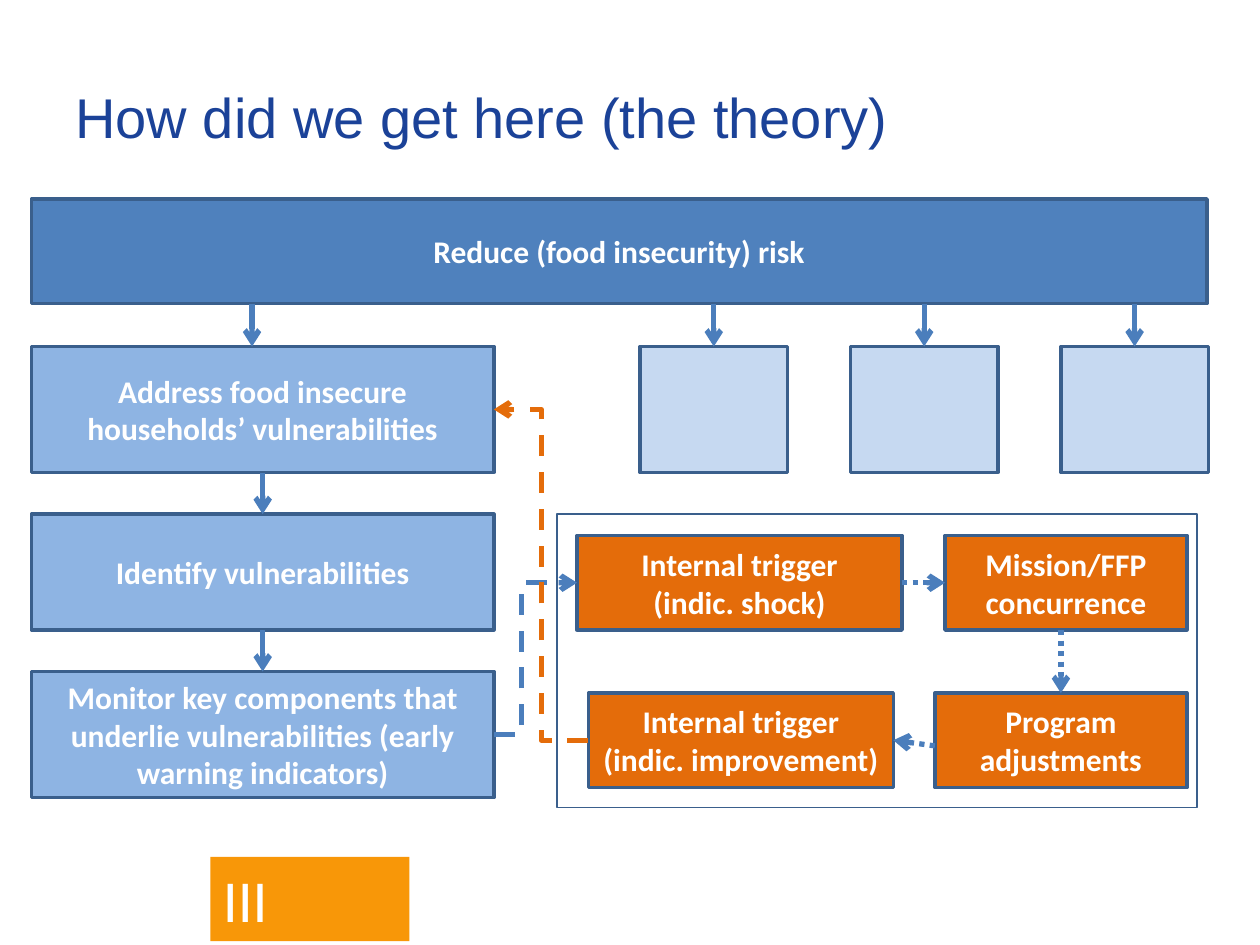
from dataclasses import dataclass

from lxml import etree
from pptx import Presentation
from pptx.dml.color import RGBColor
from pptx.enum.dml import MSO_LINE
from pptx.enum.shapes import MSO_CONNECTOR as CONN, MSO_SHAPE
from pptx.enum.text import MSO_ANCHOR, PP_ALIGN
from pptx.oxml.ns import qn
from pptx.util import Inches, Pt

TOP, LEFT, BOTTOM, RIGHT = range(4)


@dataclass(frozen=True)
class Theme:
    title: str = "1B4298"
    goal: str = "4F81BD"
    step: str = "8EB4E3"
    other: str = "C6D9F1"
    trigger: str = "E46C0A"
    outline: str = "3A5F8C"
    arrow: str = "4B7EBC"
    badge: str = "F89708"
    white: str = "FFFFFF"
    title_font: str = "Arial"
    body_font: str = "Calibri"
    title_size: int = 32
    body_size: int = 18
    badge_size: int = 34


THEME = Theme()


def rgb(value):
    return RGBColor.from_string(value)


def write(tf, lines, size, color, font=THEME.body_font, bold=False,
          align=PP_ALIGN.CENTER, anchor=MSO_ANCHOR.MIDDLE):
    tf.word_wrap = True
    tf.vertical_anchor = anchor
    for i, line in enumerate(lines):
        p = tf.paragraphs[0] if i == 0 else tf.add_paragraph()
        p.alignment = align
        r = p.add_run()
        r.text = line
        r.font.name, r.font.size, r.font.bold = font, Pt(size), bold
        r.font.color.rgb = rgb(color)


def add_rect(slide, at, fill=None, line_width=None):
    sp = slide.shapes.add_shape(MSO_SHAPE.RECTANGLE, *map(Inches, at))
    sp.shadow.inherit = False
    if fill:
        sp.fill.solid()
        sp.fill.fore_color.rgb = rgb(fill)
    else:
        sp.fill.background()
    if line_width:
        sp.line.color.rgb = rgb(THEME.outline)
        sp.line.width = Pt(line_width)
    else:
        sp.line.fill.background()
    return sp


def add_box(slide, at, fill, *lines):
    sp = add_rect(slide, at, fill, 2)
    write(sp.text_frame, lines, THEME.body_size, THEME.white, bold=True)
    return sp


def side_point(sp, side):
    x = sp.left + {LEFT: 0, RIGHT: sp.width}.get(side, sp.width // 2)
    y = sp.top + {TOP: 0, BOTTOM: sp.height}.get(side, sp.height // 2)
    return x, y


def add_arrow(slide, start, end, color=THEME.arrow, dash=None, bend=None):
    """Each end is (shape, side) or a point; bend is where an elbow turns, from 0 to 1."""
    ends = [(e, side_point(*e) if hasattr(e[0], "shape_id") else e) for e in (start, end)]
    kind = CONN.STRAIGHT if bend is None else CONN.ELBOW
    cx = slide.shapes.add_connector(kind, *ends[0][1], *ends[1][1])
    cx.line.color.rgb = rgb(color)
    cx.line.width = Pt(3)
    if dash:
        cx.line.dash_style = dash
    etree.SubElement(cx.line._get_or_add_ln(), qn("a:tailEnd"), type="arrow")
    etree.SubElement(cx._element.spPr, qn("a:effectLst"))
    if bend is None:
        for (target, point), join in zip(ends, (cx.begin_connect, cx.end_connect)):
            if target is not point:
                join(*target)
    else:
        guides = cx._element.spPr.find(qn("a:prstGeom")).get_or_add_avLst()
        etree.SubElement(guides, qn("a:gd"), name="adj1", fmla=f"val {round(bend * 100000)}")


def add_title(slide, text):
    box = slide.shapes.add_textbox(Inches(0.5), Inches(0.3), Inches(9), Inches(1.25))
    write(box.text_frame, [text], THEME.title_size, THEME.title,
          font=THEME.title_font, align=PP_ALIGN.LEFT)


def add_badge(slide, text):
    sp = add_rect(slide, (1.67, 6.8, 1.58, 0.67), THEME.badge)
    write(sp.text_frame, [text], THEME.badge_size, THEME.white,
          align=PP_ALIGN.LEFT, anchor=MSO_ANCHOR.TOP)


def add_steps(slide):
    """Draw the goal, the column of steps and the unnamed branches beside it."""
    add_box(slide, (0.25, 1.58, 9.33, 0.83), THEME.goal, "Reduce (food insecurity) risk")
    rows = (
        (2.75, 1, "Address food insecure households’ vulnerabilities"),
        (4.08, 0.92, "Identify vulnerabilities"),
        (5.33, 1, "Monitor key components that underlie vulnerabilities "
                  "(early warning indicators)"),
    )
    steps = [add_box(slide, (0.25, y, 3.67, h), THEME.step, text) for y, h, text in rows]
    for upper, lower in zip(steps, steps[1:]):
        add_arrow(slide, (upper, BOTTOM), (lower, TOP))

    goal_bottom = Inches(2.41)
    add_arrow(slide, (Inches(2), goal_bottom), (Inches(2), Inches(2.75)))
    for i in range(3):
        branch = add_rect(slide, (5.08 + 1.67 * i, 2.75, 1.17, 1), THEME.other, 2)
        x, _ = side_point(branch, TOP)
        add_arrow(slide, (x, goal_bottom), (branch, TOP))
    return steps


def add_trigger_loop(slide, address, monitor):
    shock = add_box(slide, (4.58, 4.25, 2.58, 0.75), THEME.trigger,
                    "Internal trigger", "(indic. shock)")
    mission = add_box(slide, (7.5, 4.25, 1.92, 0.75), THEME.trigger,
                      "Mission/FFP concurrence")
    program = add_box(slide, (7.42, 5.5, 2, 0.75), THEME.trigger, "Program adjustments")
    improved = add_box(slide, (4.67, 5.5, 2.42, 0.75), THEME.trigger,
                       "Internal trigger", "(indic. improvement)")
    add_rect(slide, (4.42, 4.08, 5.08, 2.33), line_width=1)

    dots, dashes = MSO_LINE.ROUND_DOT, MSO_LINE.DASH
    add_arrow(slide, (monitor, RIGHT), (shock, LEFT), dash=dashes, bend=0.33)
    add_arrow(slide, (shock, RIGHT), (mission, LEFT), dash=dots)
    add_arrow(slide, (Inches(8.42), Inches(5)), (program, TOP), dash=dots)
    add_arrow(slide, (Inches(7.42), Inches(5.92)), (improved, RIGHT), dash=dots)
    add_arrow(slide, (improved, LEFT), (address, RIGHT), THEME.trigger, dashes, bend=0.5)


def main():
    prs = Presentation()
    prs.slide_width, prs.slide_height = Inches(10), Inches(7.5)
    slide = prs.slides.add_slide(prs.slide_layouts[6])
    add_badge(slide, "III")
    add_title(slide, "How did we get here (the theory)")
    address, _, monitor = add_steps(slide)
    add_trigger_loop(slide, address, monitor)
    prs.save("out.pptx")


if __name__ == "__main__":
    main()
